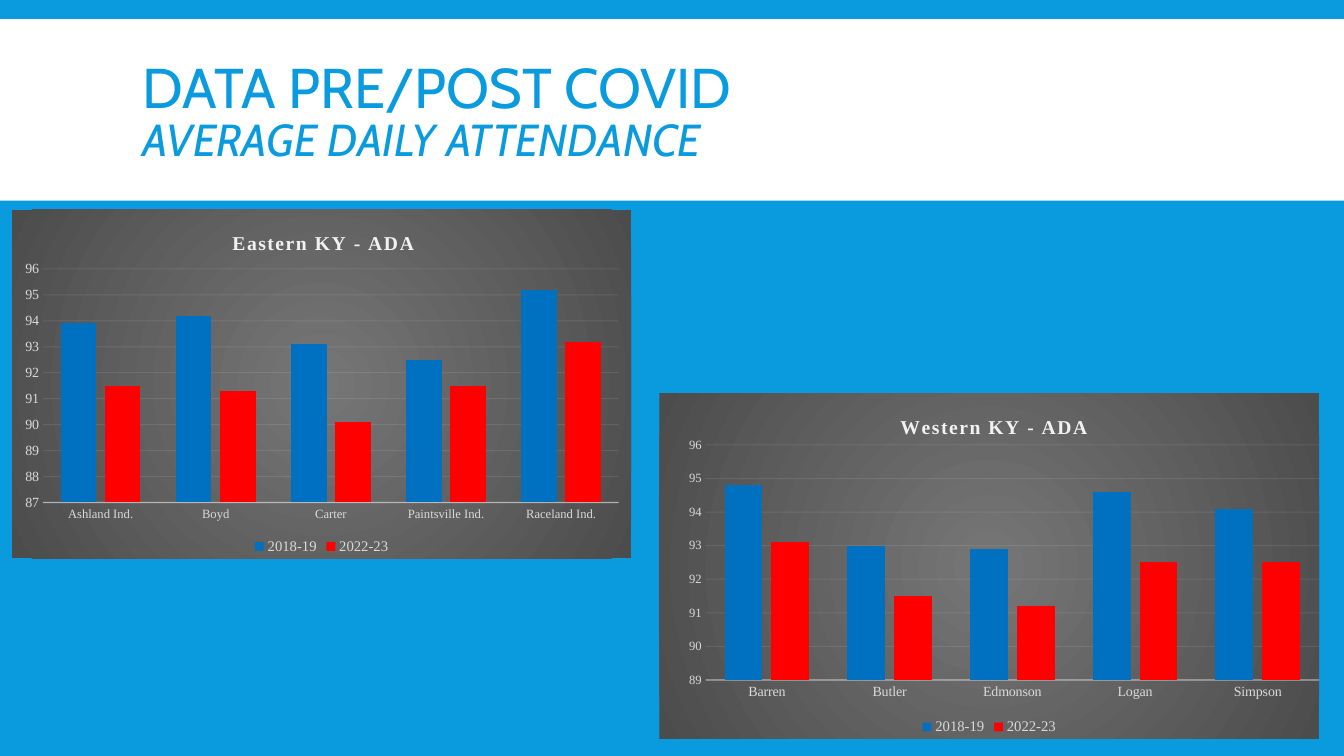
import lxml.etree
import pptx
import pptx.chart.data
import pptx.dml.color
import pptx.enum.chart
import pptx.enum.shapes
import pptx.enum.text
import pptx.oxml
import pptx.oxml.ns
import pptx.util

Inches = pptx.util.Inches
Pt = pptx.util.Pt
qn = pptx.oxml.ns.qn

BLUE, WHITE, PALE, AXIS = "099BDD", "FFFFFF", "D9D9D9", "F2F2F2"
SERIF = "Times New Roman"
YEARS = {"2018-19": "0070C0", "2022-23": "FF0000"}
GRADIENT = f"""<c:spPr {pptx.oxml.ns.nsdecls('c', 'a')}>
<a:gradFill><a:gsLst>
<a:gs pos="0"><a:srgbClr val="767676"/></a:gs>
<a:gs pos="100000"><a:srgbClr val="4C4C4C"/></a:gs>
</a:gsLst><a:path path="circle">
<a:fillToRect l="50000" t="50000" r="50000" b="50000"/></a:path></a:gradFill>
<a:ln><a:noFill/></a:ln></c:spPr>"""


def rgb(value):
    return pptx.dml.color.RGBColor.from_string(value)


def manual_layout(inner=False, **edges):
    """Return a c:layout element placed by fractions of the chart area."""
    layout = lxml.etree.Element(qn("c:layout"))
    manual = lxml.etree.SubElement(layout, qn("c:manualLayout"))
    settings = {"layoutTarget": "inner"} if inner else {}
    settings.update(xMode="edge", yMode="edge", **edges)
    for tag, value in settings.items():
        lxml.etree.SubElement(manual, qn(f"c:{tag}")).set("val", str(value))
    return pptx.oxml.parse_xml(lxml.etree.tostring(layout))


class Deck:
    def __init__(self):
        self.deck = pptx.Presentation()
        self.deck.slide_width = Inches(13.33)
        self.deck.slide_height = Inches(7.5)
        self.slide = self.deck.slides.add_slide(self.deck.slide_layouts[6])
        fill = self.slide.background.fill
        fill.solid()
        fill.fore_color.rgb = rgb(BLUE)

    def band(self, left, top, width, height, color):
        band = self.slide.shapes.add_shape(
            pptx.enum.shapes.MSO_SHAPE.RECTANGLE,
            Inches(left), Inches(top), Inches(width), Inches(height))
        band.shadow.inherit = False
        band.fill.solid()
        band.fill.fore_color.rgb = rgb(color)
        band.line.fill.background()

    def heading(self, left, top, width, height, lines):
        """Add one paragraph of (text, size, italic) lines."""
        frame = self.slide.shapes.add_textbox(
            Inches(left), Inches(top), Inches(width), Inches(height)).text_frame
        frame.word_wrap = True
        frame.vertical_anchor = pptx.enum.text.MSO_ANCHOR.MIDDLE
        paragraph = frame.paragraphs[0]
        paragraph.line_spacing = 0.85
        for index, (text, size, italic) in enumerate(lines):
            if index:
                paragraph.add_line_break()
            run = paragraph.add_run()
            run.text = text
            self.font(run.font, size, BLUE, "Cabin")
            run.font.italic = italic

    def font(self, font, size, color=PALE, name=SERIF):
        font.size = Pt(size)
        font.name = name
        font.color.rgb = rgb(color)

    def line(self, line, width, opacity):
        line.width = Pt(width)
        line.fill.solid()
        line.fill.fore_color.rgb = rgb(AXIS)
        color = line.fill._xPr.find(".//" + qn("a:srgbClr"))
        lxml.etree.SubElement(color, qn("a:alpha")).set("val", str(opacity * 1000))

    def attendance_chart(self, box, title, title_at, plot, low, sizes, districts):
        """Add a column chart; districts maps a name to its value for each year."""
        data = pptx.chart.data.CategoryChartData()
        data.categories = list(districts)
        for year, values in zip(YEARS, zip(*districts.values())):
            data.add_series(year, values)
        chart = self.slide.shapes.add_chart(
            pptx.enum.chart.XL_CHART_TYPE.COLUMN_CLUSTERED,
            *map(Inches, box), data).chart
        self.font(chart.font, 10, WHITE, "Cabin")
        chart._chartSpace.find(qn("c:chart")).addnext(pptx.oxml.parse_xml(GRADIENT))

        run = chart.chart_title.text_frame.paragraphs[0].add_run()
        run.text = title
        self.font(run.font, 14, AXIS)
        run.font.bold = True
        run.font._element.set("spc", "100")
        chart.chart_title.include_in_layout = False
        heading = chart.chart_title._element
        for old in heading.findall(qn("c:layout")):
            heading.remove(old)
        heading.find(qn("c:tx")).addnext(
            manual_layout(x=title_at[0], y=title_at[1]))

        area = chart._chartSpace.find(".//" + qn("c:plotArea"))
        for old in area.findall(qn("c:layout")):
            area.remove(old)
        area.insert(0, manual_layout(inner=True, **dict(zip("xywh", plot))))

        columns = chart.plots[0]
        columns.gap_width, columns.overlap = 100, -24
        columns.vary_by_categories = False
        for series in columns.series:
            series.format.fill.solid()
            series.format.fill.fore_color.rgb = rgb(YEARS[series.name])

        for axis, size in zip((chart.category_axis, chart.value_axis), sizes):
            axis.major_tick_mark = pptx.enum.chart.XL_TICK_MARK.NONE
            axis.minor_tick_mark = pptx.enum.chart.XL_TICK_MARK.NONE
            self.font(axis.tick_labels.font, size)
        self.line(chart.category_axis.format.line, 1, 54)
        scale = chart.value_axis
        scale.minimum_scale, scale.maximum_scale, scale.major_unit = low, 96, 1
        scale.format.line.fill.background()
        self.line(scale.major_gridlines.format.line, 0.75, 10)

        chart.has_legend = True
        chart.legend.position = pptx.enum.chart.XL_LEGEND_POSITION.BOTTOM
        chart.legend.include_in_layout = False
        self.font(chart.legend.font, 10.5)


def main():
    deck = Deck()
    deck.band(0, 0.19, 13.33, 1.8, WHITE)
    deck.heading(1.32, 0.31, 10.7, 1.65, [
        ("DATA PRE/POST COVID", 40, False),
        ("AVERAGE DAILY ATTENDANCE", 32, True)])
    deck.attendance_chart(
        (0.12, 2.08, 6.14, 3.46), "Eastern KY - ADA", (0.35, 0.05),
        (0.05, 0.17, 0.93, 0.67), 87, (9, 10),
        {"Ashland Ind.": (93.9, 91.5), "Boyd": (94.2, 91.3),
         "Carter": (93.1, 90.1), "Paintsville Ind.": (92.5, 91.5),
         "Raceland Ind.": (95.2, 93.2)})
    deck.attendance_chart(
        (6.54, 3.9, 6.55, 3.43), "Western KY - ADA", (0.36, 0.05),
        (0.07, 0.15, 0.93, 0.68), 89, (10, 9),
        {"Barren": (94.8, 93.1), "Butler": (93.0, 91.5),
         "Edmonson": (92.9, 91.2), "Logan": (94.6, 92.5),
         "Simpson": (94.1, 92.5)})
    deck.deck.save("out.pptx")


if __name__ == "__main__":
    main()
